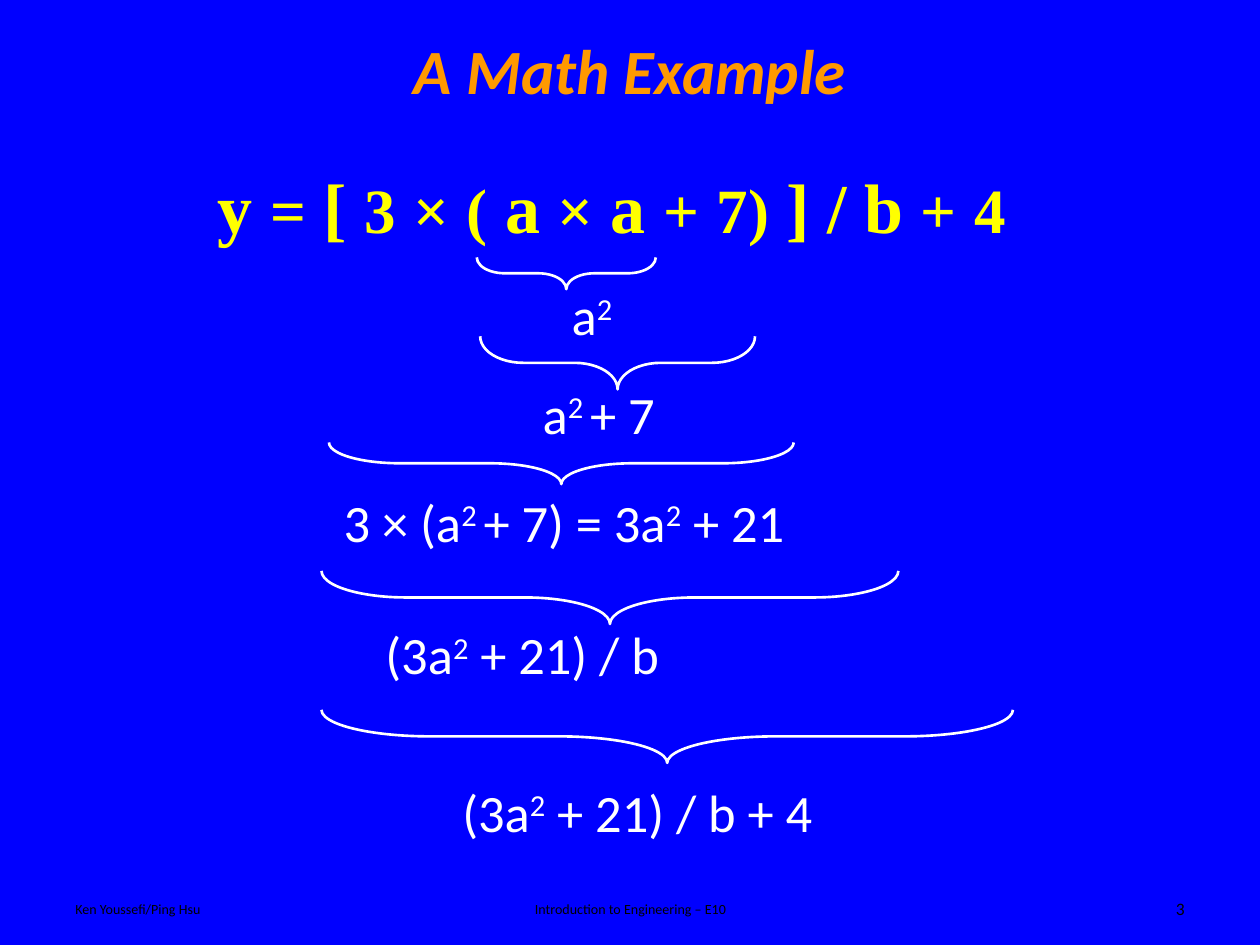
"""Build the slide that works through a math expression step by step."""
from lxml import etree
from pptx import Presentation
from pptx.dml.color import RGBColor
from pptx.enum.shapes import MSO_SHAPE
from pptx.enum.text import MSO_ANCHOR, MSO_AUTO_SIZE, PP_ALIGN
from pptx.oxml.ns import qn
from pptx.util import Cm, Pt

BLUE = RGBColor(0x00, 0x00, 0xFF)
ORANGE = RGBColor(0xFF, 0x99, 0x00)
YELLOW = RGBColor(0xFF, 0xFF, 0x00)
WHITE = RGBColor(0xFF, 0xFF, 0xFF)
BLACK = RGBColor(0x00, 0x00, 0x00)
LEFT, CENTER, RIGHT = PP_ALIGN.LEFT, PP_ALIGN.CENTER, PP_ALIGN.RIGHT
TOP, MIDDLE = MSO_ANCHOR.TOP, MSO_ANCHOR.MIDDLE
GROW = MSO_AUTO_SIZE.SHAPE_TO_FIT_TEXT
RIGHT_BRACE = MSO_SHAPE.RIGHT_BRACE

TITLE = {"name": "Calibri", "size": Pt(36), "bold": True, "italic": True}
EQUATION = {"name": "Times New Roman", "bold": True}
STEP = {"name": "Calibri", "size": Pt(30)}
FOOTER = {"name": "Calibri", "size": Pt(8)}
NUMBER = {"name": "Calibri", "size": Pt(10)}

presentation = Presentation()
presentation.slide_width = Cm(25.4)
presentation.slide_height = Cm(19.05)
slide = presentation.slides.add_slide(presentation.slide_layouts[6])
slide.background.fill.solid()
slide.background.fill.fore_color.rgb = BLUE


def add_paragraph_box(box, alignment, anchor):
    shape = slide.shapes.add_textbox(*map(Cm, box))
    frame = shape.text_frame
    frame.word_wrap = True
    frame.vertical_anchor = anchor
    paragraph = frame.paragraphs[0]
    paragraph.alignment = alignment
    if anchor == TOP:
        frame.auto_size = GROW
        properties = paragraph._p.get_or_add_pPr()
        spacing = etree.SubElement(properties, qn("a:spcBef"))
        etree.SubElement(spacing, qn("a:spcPct")).set("val", "50000")
    return paragraph


def add_run(paragraph, text, color, formats):
    run = paragraph.add_run()
    run.text = text
    run.font.color.rgb = color
    for attribute, value in formats.items():
        setattr(run.font, attribute, value)
    return run


labels = [
    ("A Math Example", (1.27, 0.2, 22.86, 2.41), CENTER, ORANGE, TITLE),
    ("Ken Youssefi/Ping Hsu", (1.27, 17.96, 5.92, 0.71), LEFT, BLACK, FOOTER),
    ("Introduction to Engineering – E10", (8.69, 17.96, 8.05, 0.71), CENTER, BLACK, FOOTER),
    ("3", (18.21, 17.93, 5.92, 0.76), RIGHT, BLACK, NUMBER),
]
for text, box, alignment, color, formats in labels:
    add_run(add_paragraph_box(box, alignment, MIDDLE), text, color, formats)

equation = "y |=| [ |3| |×| |(| a |×| a |+| |7)| ] / b |+| |4"
paragraph = add_paragraph_box((4.14, 3.18, 19.05, 1.96), LEFT, TOP)
for index, text in enumerate(equation.split("|")):
    size = Pt(36 if index % 2 else 40)
    add_run(paragraph, text, YELLOW, {**EQUATION, "size": size})

# fmt: off
steps = [
    ("a^2", (10.13, 5.59, 3.61), CENTER, (9.61, 5.19, 3.61, 0.64), 0.88),
    ("a^2 ^+ 7", (10.69, 7.57, 4.88), LEFT, (9.68, 6.78, 5.54, 1.07), 0.81),
    ("3 × (a^2 ^+ 7) = 3a^2^ + 21", (6.68, 9.75, 12.19), LEFT, (6.63, 8.92, 9.37, 0.84), 1.71),
    ("(3a^2^ + 21) / b", (7.52, 12.42, 10.8), LEFT, (6.48, 11.51, 11.63, 1.07), 1.59),
    ("(3a^2^ + 21) / b + 4", (9.07, 15.6, 9.88), LEFT, (6.48, 14.31, 13.94, 1.07), 2.04),
]
for expression, box, alignment, (left, top, span, depth), curve in steps:
    shift = (span - depth) / 2
    brace = slide.shapes.add_shape(
        RIGHT_BRACE, Cm(left + shift), Cm(top - shift), Cm(depth), Cm(span)
    )
    brace.rotation = 90
    brace.adjustments[0] = curve
    brace.shadow.inherit = False
    brace.fill.background()
    brace.line.color.rgb = WHITE
    brace.line.width = Pt(1.5)

    paragraph = add_paragraph_box((*box, 1.52), alignment, TOP)
    for index, text in enumerate(expression.split("^")):
        run = add_run(paragraph, text, WHITE, STEP)
        if index % 2:
            run._r.get_or_add_rPr().set("baseline", "30000")

presentation.save("out.pptx")
